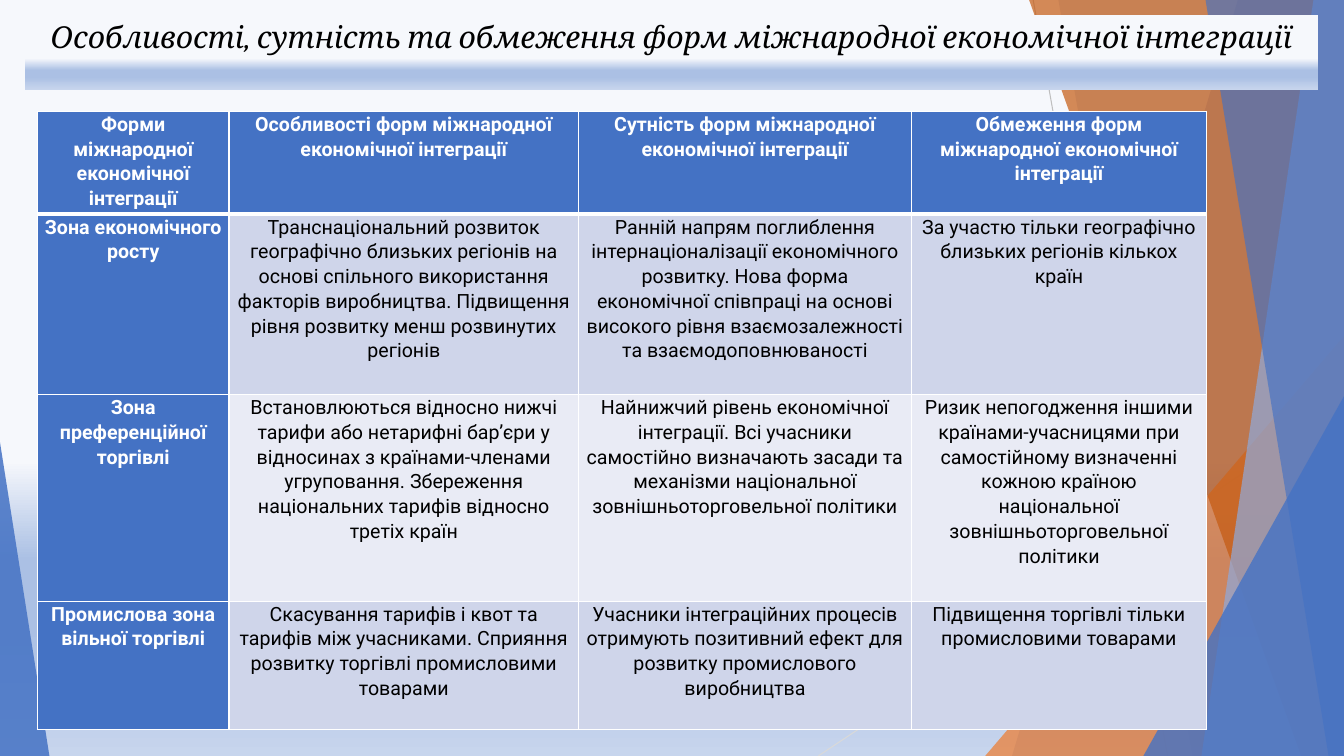
"""Build the slide on forms of international economic integration."""
import dataclasses
import typing

import lxml.etree
import pptx
import pptx.dml.color
import pptx.dml.fill
import pptx.enum.shapes
import pptx.enum.text
import pptx.oxml.ns
import pptx.slide
import pptx.table
import pptx.text.text
import pptx.util

Pt = pptx.util.Pt
Stops = tuple[tuple[int, str], ...]


@dataclasses.dataclass(frozen=True)
class Theme:
    blue: str = "4472C4"
    light_blue: str = "8FAADC"
    orange: str = "ED7D31"
    brown: str = "C55A11"
    white: str = "FFFFFF"
    black: str = "000000"
    row_tints: tuple[str, str] = ("CFD5EA", "E9EBF5")
    fade: Stops = ((74, "ABC0E4"), (83, "ABC0E4"), (100, "C7D5ED"))
    fade_start: str = "F6F8FC"
    title_font: str = "Cambria"
    title_size: float = 21.6
    table_font: str = "Roboto"
    table_size: float = 14


@dataclasses.dataclass(frozen=True)
class Ray:
    start: tuple[float, float]
    end: tuple[float, float]
    colour: str


@dataclasses.dataclass(frozen=True)
class Band:
    """A strip from a slanted left side to the right slide edge."""
    top_left: float
    bottom_left: float
    colour: str
    opacity: int


@dataclasses.dataclass(frozen=True)
class Wedge:
    """A right triangle standing on the bottom slide edge."""
    left: float
    top: float
    width: float
    apex: float
    colour: str
    opacity: int


THEME = Theme()
WIDTH, HEIGHT = 960, 540
RAYS = (
    Ray((738, 0), (834, HEIGHT), "BFBFBF"),
    Ray((WIDTH, 290), (584.5, HEIGHT), "D9D9D9"),
)
DECORATIONS: tuple[Band | Wedge, ...] = (
    Band(884.2, 722.9, THEME.blue, 30),
    Band(756, 851.8, THEME.blue, 20),
    Wedge(703.7, 240, 256.3, 1, THEME.orange, 72),
    Band(735.1, 929.5, THEME.brown, 70),
    Band(938.2, 858.2, THEME.light_blue, 70),
    Band(861.1, 949, THEME.blue, 65),
    Wedge(816.7, 283, 143.3, 1, THEME.blue, 80),
    Wedge(0, 316, 35.3, 0, THEME.blue, 85),
)
TITLE = "Особливості, сутність та обмеження форм міжнародної економічної інтеграції"
COLUMN_WIDTHS = (136.8, 249.8, 237.6, 211)
ROW_HEIGHTS = (73.4, 128.9, 147.6, 91.4)
ROWS = (
    ("Форми міжнародної економічної інтеграції",
     "Особливості форм міжнародної економічної інтеграції",
     "Сутність форм міжнародної економічної інтеграції",
     "Обмеження форм міжнародної економічної інтеграції"),
    ("Зона економічного росту",
     "Транснаціональний розвиток географічно близьких регіонів на основі спільного "
     "використання факторів виробництва. Підвищення рівня розвитку менш розвинутих регіонів",
     "Ранній напрям поглиблення інтернаціоналізації економічного розвитку. Нова форма "
     "економічної співпраці на основі високого рівня взаємозалежності та взаємодоповнюваності",
     "За участю тільки географічно близьких регіонів кількох країн"),
    ("Зона преференційної торгівлі",
     "Встановлюються відносно нижчі тарифи або нетарифні бар’єри у відносинах з "
     "країнами-членами угруповання. Збереження національних тарифів відносно третіх країн",
     "Найнижчий рівень економічної інтеграції. Всі учасники самостійно визначають засади "
     "та механізми національної зовнішньоторговельної політики",
     "Ризик непогодження іншими країнами-учасницями при самостійному визначенні кожною "
     "країною національної зовнішньоторговельної політики"),
    ("Промислова зона вільної торгівлі",
     "Скасування тарифів і квот та тарифів між учасниками. Сприяння розвитку торгівлі "
     "промисловими товарами",
     "Учасники інтеграційних процесів отримують позитивний ефект для розвитку "
     "промислового виробництва",
     "Підвищення торгівлі тільки промисловими товарами"),
)


def rgb(colour: str) -> pptx.dml.color.RGBColor:
    """Return the colour object for a hex value."""
    return pptx.dml.color.RGBColor.from_string(colour)


def add_xml(parent: typing.Any, tag: str, **attributes: str) -> typing.Any:
    """Append a child element and return it."""
    return lxml.etree.SubElement(parent, pptx.oxml.ns.qn(tag), attributes)


def fill_solid(fill: pptx.dml.fill.FillFormat, colour: str) -> None:
    """Apply one plain colour."""
    fill.solid()
    fill.fore_color.rgb = rgb(colour)


def fill_gradient(fill: pptx.dml.fill.FillFormat, element: typing.Any, start: int) -> None:
    """Apply the downward fade whose first stop lies at start."""
    fill.gradient()
    fill.gradient_angle = 270
    stop_list = element.xpath(".//a:gsLst")[0]
    for stop in list(stop_list):
        stop_list.remove(stop)
    for position, colour in ((start, THEME.fade_start), *THEME.fade):
        stop = add_xml(stop_list, "a:gs", pos=str(position * 1000))
        add_xml(stop, "a:srgbClr", val=colour)


def write_text(frame: pptx.text.text.TextFrame, text: str, *, font: str, size: float,
               colour: str, bold: bool = False, italic: bool = False,
               line_spacing: float = 1, space_after: float = 0) -> None:
    """Write one centred, formatted paragraph."""
    frame.word_wrap = True
    paragraph = frame.paragraphs[0]
    paragraph.alignment = pptx.enum.text.PP_ALIGN.CENTER
    paragraph.line_spacing = line_spacing
    paragraph.space_before = Pt(0)
    paragraph.space_after = Pt(space_after)
    run = paragraph.add_run()
    run.text = text
    run.font.name, run.font.size = font, Pt(size)
    run.font.bold, run.font.italic = bold, italic
    run.font.color.rgb = rgb(colour)


def draw_ray(slide: pptx.slide.Slide, ray: Ray) -> None:
    """Draw a thin background line."""
    connector = slide.shapes.add_connector(
        pptx.enum.shapes.MSO_CONNECTOR.STRAIGHT, *map(Pt, ray.start + ray.end))
    connector.line.color.rgb = rgb(ray.colour)
    connector.line.width = Pt(0.75)
    add_xml(connector.element.spPr, "a:effectLst")


def draw_decoration(slide: pptx.slide.Slide, item: Band | Wedge) -> None:
    """Draw a translucent band or wedge."""
    if isinstance(item, Band):
        builder = slide.shapes.build_freeform(Pt(item.top_left), Pt(0))
        corners = ((WIDTH, 0), (WIDTH, HEIGHT), (item.bottom_left, HEIGHT))
        builder.add_line_segments([(Pt(x), Pt(y)) for x, y in corners], close=True)
        shape = builder.convert_to_shape()
    else:
        shape = slide.shapes.add_shape(
            pptx.enum.shapes.MSO_SHAPE.ISOSCELES_TRIANGLE, Pt(item.left), Pt(item.top),
            Pt(item.width), Pt(HEIGHT - item.top))
        shape.adjustments[0] = item.apex
    shape.shadow.inherit = False
    shape.line.fill.background()
    fill_solid(shape.fill, item.colour)
    colour = shape.element.xpath("./p:spPr/a:solidFill/a:srgbClr")[0]
    add_xml(colour, "a:alpha", val=str(item.opacity * 1000))


def draw_title(slide: pptx.slide.Slide) -> None:
    """Format the title and bring it in front of the decorations."""
    title = slide.shapes.title
    title.left, title.top, title.width, title.height = map(Pt, (18, 10.8, 923.8, 53.3))
    fill_gradient(title.fill, title.element, 58)
    frame = title.text_frame
    frame.vertical_anchor = pptx.enum.text.MSO_ANCHOR.TOP
    frame.auto_size = pptx.enum.text.MSO_AUTO_SIZE.NONE
    frame.margin_top = Pt(2)
    write_text(frame, TITLE, font=THEME.title_font, size=THEME.title_size,
               colour=THEME.black, italic=True)
    title.element.getparent().append(title.element)


def format_cell(cell: pptx.table._Cell, text: str, row: int, column: int) -> None:
    """Give a cell its borders, fill and text."""
    heading = row == 0 or column == 0
    cell.margin_left = cell.margin_right = Pt(5)
    cell.margin_top = cell.margin_bottom = Pt(0)
    properties = cell._tc.get_or_add_tcPr()
    for side in ("L", "R", "T", "B"):
        under_header = (row, side) in ((0, "B"), (1, "T"))
        border = add_xml(properties, f"a:ln{side}", w=str(Pt(3 if under_header else 1)))
        add_xml(add_xml(border, "a:solidFill"), "a:srgbClr", val=THEME.white)
    fill_solid(cell.fill, THEME.blue if heading else THEME.row_tints[(row - 1) % 2])
    write_text(cell.text_frame, text, font=THEME.table_font, size=THEME.table_size,
               colour=THEME.white if heading else THEME.black, bold=heading,
               line_spacing=1.07, space_after=8)


def draw_table(slide: pptx.slide.Slide) -> None:
    """Draw the table of integration forms."""
    table = slide.shapes.add_table(
        len(ROWS), len(COLUMN_WIDTHS), Pt(26.8), Pt(79.6),
        Pt(sum(COLUMN_WIDTHS)), Pt(sum(ROW_HEIGHTS))).table
    table.horz_banding = False
    for column, width in enumerate(COLUMN_WIDTHS):
        table.columns[column].width = Pt(width)
    for row, (height, texts) in enumerate(zip(ROW_HEIGHTS, ROWS)):
        table.rows[row].height = Pt(height)
        for column, text in enumerate(texts):
            format_cell(table.cell(row, column), text, row, column)


def main() -> None:
    """Build and save the presentation."""
    presentation = pptx.Presentation()
    presentation.slide_width, presentation.slide_height = Pt(WIDTH), Pt(HEIGHT)
    slide = presentation.slides.add_slide(presentation.slide_layouts[5])
    fill_gradient(slide.background.fill, slide.element, 61)
    for ray in RAYS:
        draw_ray(slide, ray)
    for item in DECORATIONS:
        draw_decoration(slide, item)
    draw_title(slide)
    draw_table(slide)
    presentation.save("out.pptx")


if __name__ == "__main__":
    main()
